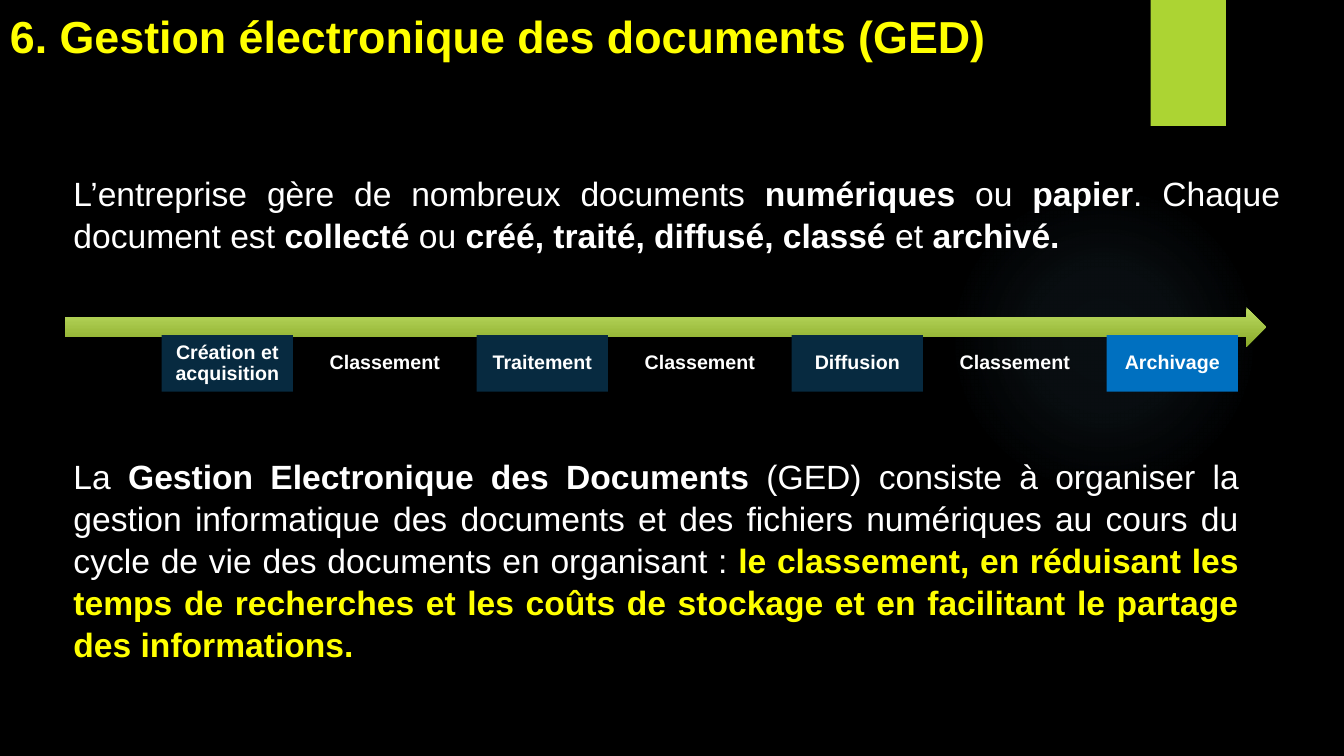
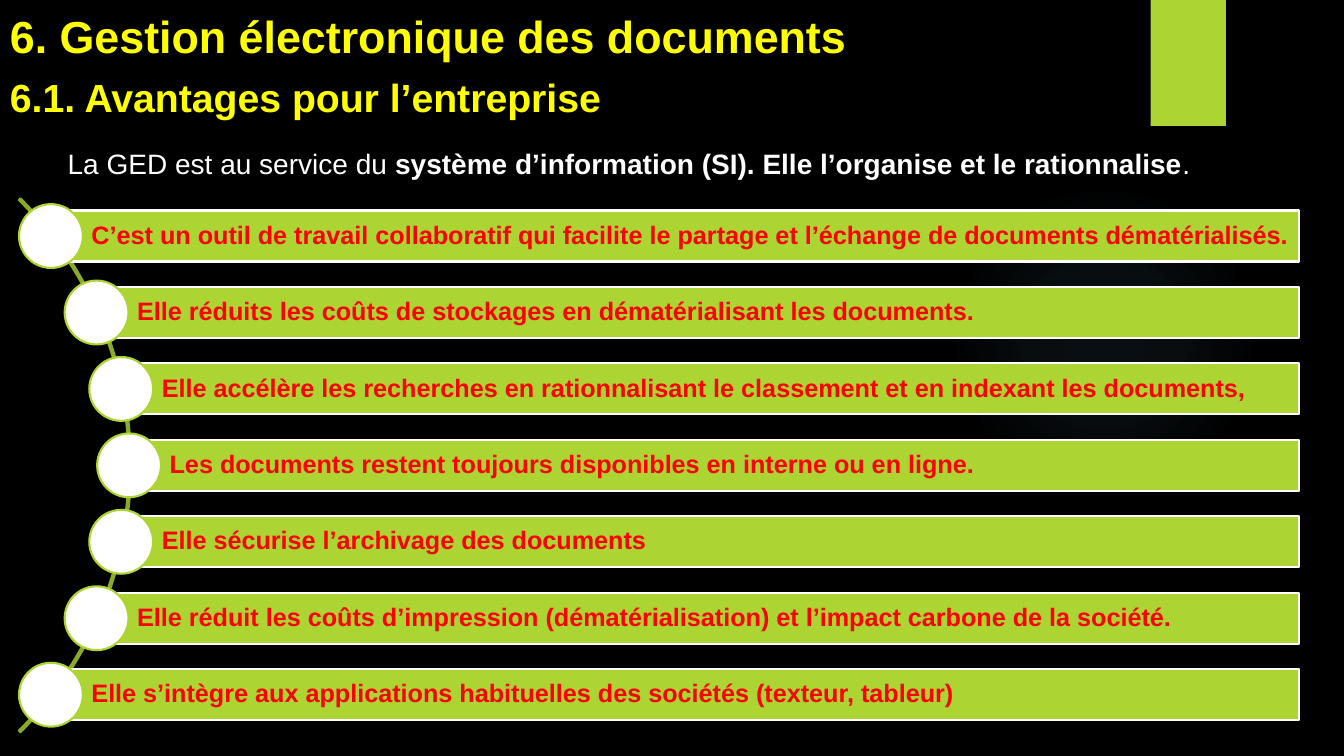
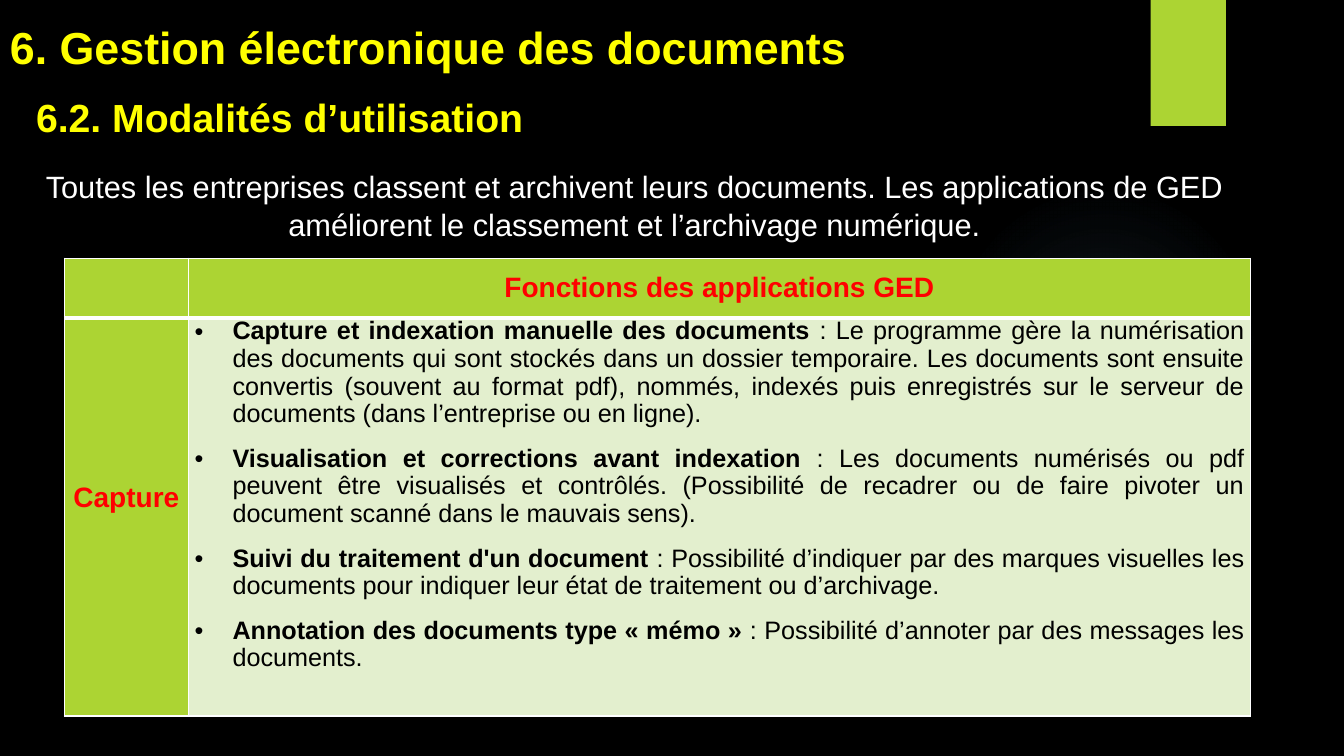
from dataclasses import dataclass
from math import sqrt

from pptx import Presentation
from pptx.dml.color import RGBColor
from pptx.enum.shapes import MSO_SHAPE
from pptx.enum.text import MSO_ANCHOR, PP_ALIGN
from pptx.oxml import parse_xml
from pptx.oxml.ns import nsdecls
from pptx.util import Pt

RECT, OVAL = MSO_SHAPE.RECTANGLE, MSO_SHAPE.OVAL
ARROW, ARC = MSO_SHAPE.RIGHT_ARROW, MSO_SHAPE.BLOCK_ARC
MIDDLE = MSO_ANCHOR.MIDDLE
LEFT, CENTER, JUSTIFY = PP_ALIGN.LEFT, PP_ALIGN.CENTER, PP_ALIGN.JUSTIFY


@dataclass(frozen=True)
class Theme:
    font: str = "Arial"
    black: str = "000000"
    white: str = "FFFFFF"
    yellow: str = "FFFF00"
    red: str = "FF0000"
    green: str = "ACD433"
    arc: str = "8AAA29"
    arrow_top: str = "BCDC62"
    pale: str = "E3EFCE"
    navy: str = "072A40"
    blue: str = "0070C0"
    glow: str = "7AC4F0"
    title: int = 32
    subtitle: int = 28
    body: int = 24
    intro: int = 22
    lead: int = 20
    item: int = 18
    step: int = 14
    leading: float = 1.04
    table_leading: float = 0.98


T = Theme()


def rgb(color):
    return RGBColor.from_string(color)


def write(p, text, *, size, color=T.white, bold=False, align=None, before=None,
          after=None, leading=None, bullet=False):
    """Append text to a paragraph; ** switches bold on and off."""
    if bullet:
        pPr = p._p.get_or_add_pPr()
        pPr.set("marL", str(Pt(27)))
        pPr.set("indent", str(Pt(-27)))
        pPr.append(parse_xml(f'<a:buFont {nsdecls("a")} typeface="{T.font}"/>'))
        pPr.append(parse_xml(f'<a:buChar {nsdecls("a")} char="•"/>'))
    if align is not None:
        p.alignment = align
    if before is not None:
        p.space_before = Pt(before)
    if after is not None:
        p.space_after = Pt(after)
    if leading is not None:
        p.line_spacing = leading
    for i, part in enumerate(text.split("**")):
        if part:
            r = p.add_run()
            r.text = part
            r.font.name = T.font
            r.font.size = Pt(size)
            r.font.bold = bold != bool(i % 2)
            r.font.color.rgb = rgb(color)


def set_margins(target, left, top, right, bottom):
    target.margin_left, target.margin_top = Pt(left), Pt(top)
    target.margin_right, target.margin_bottom = Pt(right), Pt(bottom)


def add_box(s, x, y, w, h):
    tf = s.shapes.add_textbox(Pt(x), Pt(y), Pt(w), Pt(h)).text_frame
    tf.word_wrap = True
    set_margins(tf, 7.2, 5, 7.2, 3.6)
    return tf


def add_shape(s, kind, x, y, w, h, fill=None, line=None):
    sp = s.shapes.add_shape(kind, Pt(x), Pt(y), Pt(w), Pt(h))
    sp.shadow.inherit = False
    if fill:
        sp.fill.solid()
        sp.fill.fore_color.rgb = rgb(fill)
    else:
        sp.fill.background()
    if line:
        sp.line.color.rgb = rgb(line)
        sp.line.width = Pt(1.5)
    else:
        sp.line.fill.background()
    return sp


def add_glow(s, x, y, size):
    sp = add_shape(s, OVAL, x, y, size, size, T.glow)
    stops = "".join(
        f'<a:gs pos="{pos}000"><a:srgbClr val="{T.glow}">'
        f'<a:alpha val="{alpha}000"/></a:srgbClr></a:gs>'
        for pos, alpha in ((0, 7), (36, 6), (69, 0)))
    grad = parse_xml(
        f'<a:gradFill {nsdecls("a")}><a:gsLst>{stops}</a:gsLst><a:path path="circle">'
        '<a:fillToRect l="50000" t="50000" r="50000" b="50000"/></a:path></a:gradFill>')
    spPr = sp._element.spPr
    spPr.replace(spPr.find(".//{*}solidFill"), grad)


def new_slide(prs, title, title_top=0):
    """Add a slide with the shared background, glow, green tab and title."""
    s = prs.slides.add_slide(prs.slide_layouts[6])
    s.background.fill.solid()
    s.background.fill.fore_color.rgb = rgb(T.black)
    add_glow(s, 677.5, 131.8, 221.8)
    add_shape(s, RECT, 821.9, 0, 53.8, 90, T.green)
    write(add_box(s, 0, title_top, 717, 46).paragraphs[0], title, size=T.title,
          color=T.yellow, bold=True, align=LEFT, leading=T.leading)
    return s


def add_heading(s, x, y, w, h, heading, intro, size):
    """Place a yellow subtitle with a centred sentence below it."""
    tf = add_box(s, x, y, w, h)
    write(tf.paragraphs[0], heading, size=T.subtitle, color=T.yellow, bold=True,
          align=JUSTIFY, leading=T.leading)
    write(tf.add_paragraph(), intro, size=size, align=CENTER, before=18,
          leading=T.leading)


def add_timeline(s, x, y, w, steps):
    """Place an arrow with evenly spaced steps hanging from it."""
    arrow = add_shape(s, ARROW, x, y, w, 28.4)
    arrow.fill.gradient()
    arrow.fill.gradient_angle = 270
    for stop, color in zip(arrow.fill.gradient_stops, (T.arrow_top, T.arc)):
        stop.color.rgb = rgb(color)
    for i, (label, fill) in enumerate(steps):
        sp = add_shape(s, RECT, x + 69 + 112.5 * i, y + 20, 93.8, 40.4, fill)
        tf = sp.text_frame
        tf.word_wrap = True
        tf.vertical_anchor = MIDDLE
        set_margins(tf, 0, 11.4, 0, 11.4)
        write(tf.paragraphs[0], label, size=T.step, bold=True, align=CENTER, leading=0.9)


def add_arc_list(s, cx, cy, radius, right, items):
    """Place bars ending at right, each starting from a disc on an arc."""
    arc_r, disc, bar_h, pitch = radius + 1.4, 45.6, 36.5, 54.6
    arc = add_shape(s, ARC, cx - arc_r, cy - arc_r, 2 * arc_r, 2 * arc_r, line=T.arc)
    for i, value in enumerate((189, 27, 0.003)):
        arc.adjustments[i] = value
    for i, item in enumerate(items):
        dy = (i - (len(items) - 1) / 2) * pitch
        x, y = cx + sqrt(radius ** 2 - dy ** 2), cy + dy
        bar = add_shape(s, RECT, x, y - bar_h / 2, right - x, bar_h, T.green, T.white)
        tf = bar.text_frame
        tf.word_wrap = True
        tf.vertical_anchor = MIDDLE
        set_margins(tf, 29, 3.6, 3.6, 3.6)
        write(tf.paragraphs[0], item, size=T.item, color=T.red, bold=True,
              align=LEFT, leading=0.9)
        add_shape(s, OVAL, x - disc / 2, y - disc / 2, disc, disc, T.white, T.green)


def format_cell(cell, fill, **borders):
    """Set fill, margins and white borders, given as side=width."""
    tcPr = cell._tc.get_or_add_tcPr()
    for side in "LRTB":
        if side in borders:
            tcPr.append(parse_xml(
                f'<a:ln{side} {nsdecls("a")} w="{Pt(borders[side])}"><a:solidFill>'
                f'<a:srgbClr val="{T.white}"/></a:solidFill></a:ln{side}>'))
    cell.fill.solid()
    cell.fill.fore_color.rgb = rgb(fill)
    set_margins(cell, 4.5, 0, 4.5, 0)


def add_functions_table(s, x, y, widths, heights, header, label, points):
    table = s.shapes.add_table(2, 2, Pt(x), Pt(y), Pt(sum(widths)), Pt(sum(heights))).table
    table.first_row = table.horz_banding = False
    for column, width in zip(table.columns, widths):
        column.width = Pt(width)
    for row, height in zip(table.rows, heights):
        row.height = Pt(height)
    for col in range(2):
        format_cell(table.cell(0, col), T.green, L=1, R=1, T=1, B=3)
        format_cell(table.cell(1, col), T.pale if col else T.green, L=1, R=1, T=3, B=1)
    for cell, text in ((table.cell(0, 1), header), (table.cell(1, 0), label)):
        cell.vertical_anchor = MIDDLE
        write(cell.text_frame.paragraphs[0], text, size=T.lead, color=T.red,
              bold=True, align=CENTER)
    table.cell(1, 0).margin_bottom = Pt(27)
    tf = table.cell(1, 1).text_frame
    for i, point in enumerate(points):
        p = tf.add_paragraph() if i else tf.paragraphs[0]
        write(p, point, size=T.item, color=T.black, align=JUSTIFY,
              before=12 if i else None, leading=T.table_leading, bullet=True)


def build_lifecycle(prs):
    s = new_slide(prs, "6. Gestion électronique des documents (GED)")
    p = add_box(s, 45.4, 117.4, 876, 65.5).paragraphs[0]
    write(p, "L’entreprise gère de nombreux documents **numériques** ou **papier**. "
          "Chaque document est **collecté** ou **créé, traité, diffusé, classé **et"
          "** archivé.**", size=T.body, align=JUSTIFY, leading=T.leading)
    add_timeline(s, 46.5, 219.4, 858, (
        ("Création et acquisition", T.navy), ("Classement", None),
        ("Traitement", T.navy), ("Classement", None),
        ("Diffusion", T.navy), ("Classement", None), ("Archivage", T.blue)))
    p = add_box(s, 45.4, 319.7, 846.5, 152.6).paragraphs[0]
    write(p, "La **Gestion Electronique des Documents** (GED) consiste à organiser la "
          "gestion informatique des documents et des fichiers numériques au cours du "
          "cycle de vie des documents en organisant : ",
          size=T.body, align=JUSTIFY, leading=T.leading)
    write(p, "le classement, en réduisant les temps de recherches et les coûts de "
          "stockage et en facilitant le partage des informations.",
          size=T.body, color=T.yellow, bold=True)


def build_benefits(prs):
    s = new_slide(prs, "6. Gestion électronique des documents")
    add_heading(s, 0, 46, 898.5, 83.5, "6.1. Avantages pour l’entreprise",
                "La GED est au service du **système d’information (SI). Elle l’organise "
                "et le rationnalise**.", T.lead)
    add_arc_list(s, -176, 332.4, 268.2, 928.2, (
        "C’est un outil de travail collaboratif qui facilite le partage et l’échange "
        "de documents dématérialisés.",
        "Elle réduits les coûts de stockages en dématérialisant les documents.",
        "Elle accélère les recherches en rationnalisant le classement et en indexant "
        "les documents,",
        "Les documents restent toujours disponibles en interne ou en ligne.",
        "Elle sécurise l’archivage des documents",
        "Elle réduit les coûts d’impression (dématérialisation) et l’impact carbone "
        "de la société.",
        "Elle s’intègre aux applications habituelles des sociétés (texteur, tableur)"))


def build_usage(prs):
    s = new_slide(prs, "6. Gestion électronique des documents", 7.2)
    add_functions_table(
        s, 46, 184.5, (88.6, 758.8), (42.5, 284.4),
        "Fonctions des applications GED", "Capture", (
            "**Capture et indexation manuelle des documents **: Le programme gère la "
            "numérisation des documents qui sont stockés dans un dossier temporaire. Les "
            "documents sont ensuite convertis (souvent au format pdf), nommés, indexés "
            "puis enregistrés sur le serveur de documents (dans l’entreprise ou en ligne).",
            "**Visualisation et corrections avant indexation** : Les documents numérisés "
            "ou pdf peuvent être visualisés et contrôlés. (Possibilité de recadrer ou de "
            "faire pivoter un document scanné dans le mauvais sens).",
            "**Suivi du traitement d'un document **: Possibilité d’indiquer par des "
            "marques visuelles les documents pour indiquer leur état de traitement ou "
            "d’archivage.",
            "**Annotation des documents type « mémo »** : Possibilité d’annoter par "
            "des messages les documents."))
    add_heading(s, 18.7, 60.5, 869, 113, "6.2. Modalités d’utilisation",
                "Toutes les entreprises classent et archivent leurs documents. Les "
                "applications de GED améliorent le classement et l’archivage numérique.",
                T.intro)


def main():
    prs = Presentation()
    prs.slide_width, prs.slide_height = Pt(960), Pt(540)
    build_lifecycle(prs)
    build_benefits(prs)
    build_usage(prs)
    prs.save("out.pptx")


if __name__ == "__main__":
    main()
